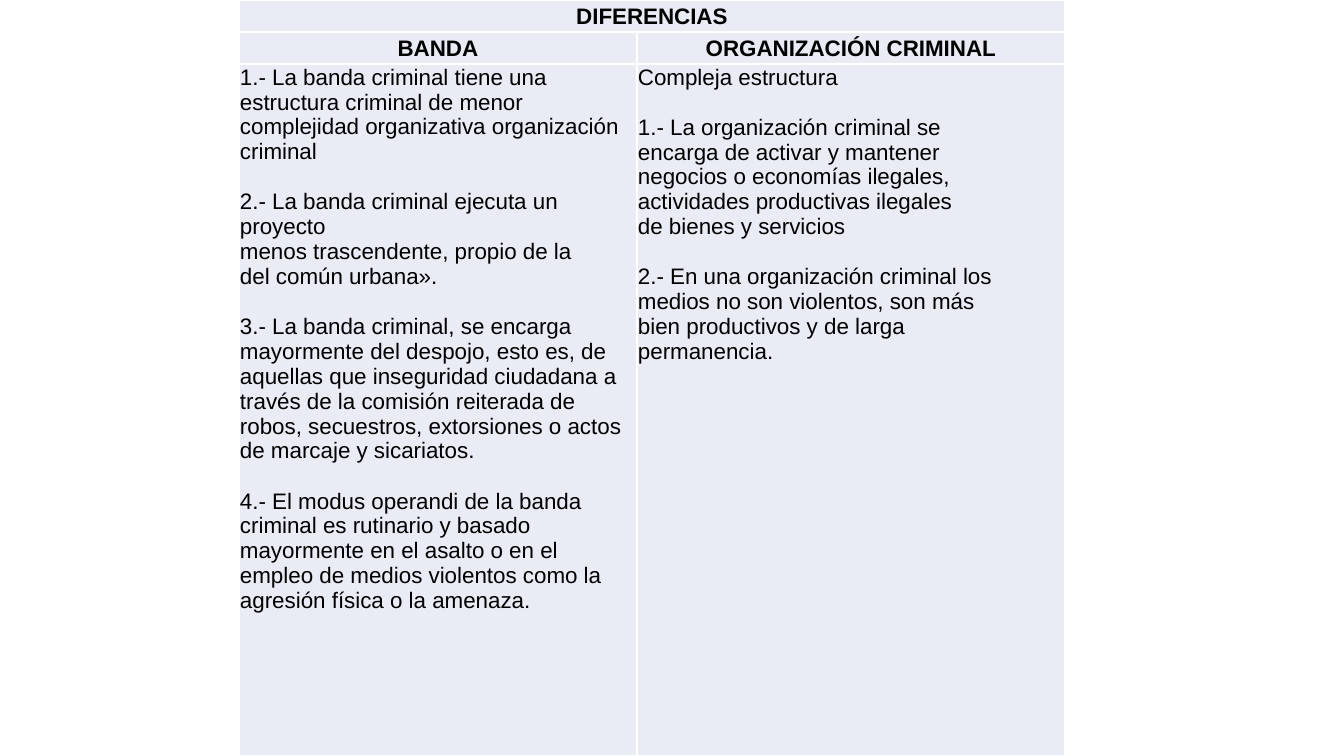
from lxml.etree import SubElement
from pptx import Presentation
from pptx.dml.color import RGBColor
from pptx.enum.text import MSO_ANCHOR, PP_ALIGN
from pptx.oxml.ns import qn
from pptx.util import Emu, Pt

# Content
TITLE = "DIFERENCIAS"
HEADINGS = ["BANDA", "ORGANIZACIÓN CRIMINAL"]
DIFFERENCES = [
    [
        "1.- La banda criminal tiene una estructura criminal de menor "
        "complejidad organizativa organización criminal",
        "2.- La banda criminal ejecuta un proyecto\n"
        "menos trascendente, propio de la\n"
        "del común urbana».",
        "3.- La banda criminal, se encarga mayormente del despojo, esto es, "
        "de aquellas que inseguridad ciudadana a través de la comisión "
        "reiterada de robos, secuestros, extorsiones o actos de marcaje y "
        "sicariatos.",
        "4.- El modus operandi de la banda criminal es rutinario y basado "
        "mayormente en el asalto o en el empleo de medios violentos como la "
        "agresión física o la amenaza.",
    ],
    [
        "Compleja estructura",
        "1.- La organización criminal se\n"
        "encarga de activar y mantener\n"
        "negocios o economías ilegales,\n"
        "actividades productivas ilegales\n"
        "de bienes y servicios",
        "2.- En una organización criminal los\n"
        "medios no son violentos, son más\n"
        "bien productivos y de larga\n"
        "permanencia.",
    ],
]

# Look and layout, lengths in px
COLORS = {"cell": "E9EBF5", "border": "FFFFFF", "text": "000000"}
FONT = "Arial"
SLIDE_W, SLIDE_H = 1344, 756
TABLE_LEFT, TABLE_TOP = 239, 0
COLUMN_WIDTHS = [398, 428]
HEADER_H = 32
ROW_HEIGHTS = [HEADER_H, HEADER_H, SLIDE_H - 2 * HEADER_H]
INSET = 1


def px(length):
    return Emu(round(length * 914400 / 100.8))


def style_cell(cell):
    """Give a cell its insets, thin borders and fill."""
    cell.margin_left = cell.margin_right = cell.margin_top = px(INSET)
    cell.margin_bottom = 0
    properties = cell._tc.get_or_add_tcPr()
    for side in ("a:lnL", "a:lnR", "a:lnT", "a:lnB"):
        border = SubElement(properties, qn(side), w=str(Pt(1)))
        border_fill = SubElement(border, qn("a:solidFill"))
        SubElement(border_fill, qn("a:srgbClr"), val=COLORS["border"])
    cell.fill.solid()
    cell.fill.fore_color.rgb = RGBColor.from_string(COLORS["cell"])


def write(cell, paragraphs, size=16, bold=False, align=PP_ALIGN.LEFT,
          anchor=MSO_ANCHOR.TOP, gap=18):
    """Fill a cell; a newline inside a paragraph is a line break."""
    cell.vertical_anchor = anchor
    frame = cell.text_frame
    for index, text in enumerate(paragraphs):
        paragraph = frame.add_paragraph() if index else frame.paragraphs[0]
        paragraph.alignment = align
        if index:
            paragraph.space_before = Pt(gap)
        for line_index, line in enumerate(text.split("\n")):
            if line_index:
                paragraph.add_line_break()
            run = paragraph.add_run()
            run.text = line
            run.font.name = FONT
            run.font.size = Pt(size)
            run.font.bold = bold
            run.font.color.rgb = RGBColor.from_string(COLORS["text"])


# Slide
deck = Presentation()
deck.slide_width, deck.slide_height = px(SLIDE_W), px(SLIDE_H)
slide = deck.slides.add_slide(deck.slide_layouts[6])

# Table grid
comparison = slide.shapes.add_table(
    len(ROW_HEIGHTS), len(COLUMN_WIDTHS), px(TABLE_LEFT), px(TABLE_TOP),
    px(sum(COLUMN_WIDTHS)), px(sum(ROW_HEIGHTS))).table
for column, width in zip(comparison.columns, COLUMN_WIDTHS):
    column.width = px(width)
for row, height in zip(comparison.rows, ROW_HEIGHTS):
    row.height = px(height)
for cell in comparison.iter_cells():
    style_cell(cell)
comparison.cell(0, 0).merge(comparison.cell(0, 1))

# Headings and differences
heading_format = dict(bold=True, align=PP_ALIGN.CENTER,
                      anchor=MSO_ANCHOR.MIDDLE)
write(comparison.cell(0, 0), [TITLE], **heading_format)
for index, (heading, points) in enumerate(zip(HEADINGS, DIFFERENCES)):
    write(comparison.cell(1, index), [heading], **heading_format)
    write(comparison.cell(2, index), points)

deck.save("out.pptx")
